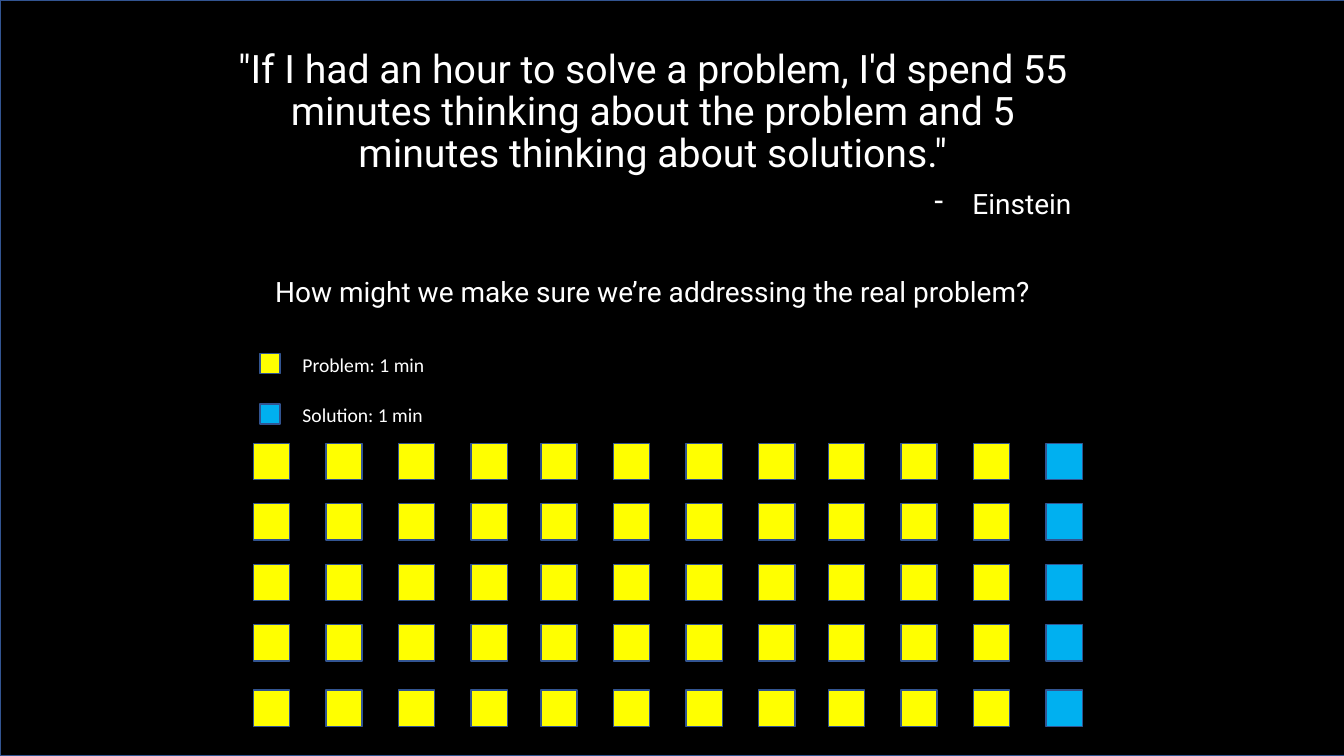
import pptx
import pptx.dml.color
import pptx.enum.shapes
import pptx.enum.text
import pptx.oxml
import pptx.oxml.ns
import pptx.util

BLACK = pptx.dml.color.RGBColor(0x00, 0x00, 0x00)
WHITE = pptx.dml.color.RGBColor(0xFF, 0xFF, 0xFF)
YELLOW = pptx.dml.color.RGBColor(0xFF, 0xFF, 0x00)
BLUE = pptx.dml.color.RGBColor(0x00, 0xB0, 0xF0)
NAVY = pptx.dml.color.RGBColor(0x32, 0x54, 0x91)
ALIGN = pptx.enum.text.PP_ALIGN

SLIDE_COLUMNS, SLIDE_ROWS = 18.52, 12.5
GROUPS, GROUP_SIZE, GROUP_PITCH = 3, 4, 3.96
MINUTE_ROWS = (0, 1, 2, 3, 4.08)
FIRST_COLUMN, FIRST_ROW = 3.49, 7.33


def write(para, text, font="Roboto", size=20, align=ALIGN.LEFT,
          spacing=1.0, before=0, bullet=None, indent=0.38):
    para.alignment = align
    para.line_spacing = spacing
    para.space_before = pptx.util.Pt(before)
    if bullet:
        properties = para._p.get_or_add_pPr()
        hang = pptx.util.Inches(indent)
        properties.set("marL", str(hang))
        properties.set("indent", str(-hang))
        mark = pptx.oxml.parse_xml(
            f'<a:buChar {pptx.oxml.ns.nsdecls("a")} char="{bullet}"/>')
        properties.append(mark)
    span = para.add_run()
    span.text = text
    span.font.name = font
    span.font.size = pptx.util.Pt(size)
    span.font.color.rgb = WHITE


class Page:
    """Draws styled elements on one slide, measured in grid columns and rows."""

    column = pptx.util.Inches(0.72)
    row = pptx.util.Inches(0.6)

    def __init__(self, deck):
        self.slide = deck.slides.add_slide(deck.slide_layouts[5])

    def place(self, left, top, width, height):
        return (round(left * self.column), round(top * self.row),
                round(width * self.column), round(height * self.row))

    def rectangle(self, left, top, width, height, color):
        box = self.slide.shapes.add_shape(
            pptx.enum.shapes.MSO_SHAPE.RECTANGLE,
            *self.place(left, top, width, height))
        box.shadow.inherit = False
        box.fill.solid()
        box.fill.fore_color.rgb = color
        box.line.color.rgb = NAVY
        box.line.width = pptx.util.Pt(1)
        return box

    def backdrop(self, color):
        box = self.rectangle(0, 0, SLIDE_COLUMNS, SLIDE_ROWS, color)
        self.slide.shapes._spTree.insert(2, box._element)

    def heading(self, left, top, width, height, lines):
        title = self.slide.shapes.title
        title.left, title.top, title.width, title.height = self.place(
            left, top, width, height)
        frame = title.text_frame
        frame.word_wrap = True
        frame.auto_size = pptx.enum.text.MSO_AUTO_SIZE.NONE
        frame.vertical_anchor = pptx.enum.text.MSO_ANCHOR.TOP
        for index, (text, style) in enumerate(lines):
            para = frame.add_paragraph() if index else frame.paragraphs[0]
            write(para, text, spacing=0.9, **style)

    def label(self, left, top, width, height, text):
        box = self.slide.shapes.add_textbox(
            *self.place(left, top, width, height))
        box.text_frame.word_wrap = True
        write(box.text_frame.paragraphs[0], text, font="Calibri", size=14)


def main():
    deck = pptx.Presentation()
    deck.slide_width = pptx.util.Inches(13.33)
    deck.slide_height = pptx.util.Inches(7.5)
    page = Page(deck)
    page.backdrop(BLACK)
    page.heading(3.08, 0.73, 11.82, 5.98, [
        ("\"If I had an hour to solve a problem, I'd spend 55 minutes thinking "
         "about the problem and 5 minutes thinking about solutions.\"",
         dict(size=28, align=ALIGN.CENTER, before=10)),
        ("Einstein", dict(align=ALIGN.RIGHT, before=10, bullet="-")),
        ("How might we make sure we’re addressing the real problem?",
         dict(align=ALIGN.CENTER, before=41)),
    ])

    last = GROUPS * GROUP_SIZE - 1
    for number in range(GROUPS * GROUP_SIZE):
        group, member = divmod(number, GROUP_SIZE)
        left = FIRST_COLUMN + group * GROUP_PITCH + member
        for minute_row in MINUTE_ROWS:
            page.rectangle(left, FIRST_ROW + minute_row, 0.5, 0.6,
                           BLUE if number == last else YELLOW)

    legend = (("Problem: 1 min", YELLOW), ("Solution: 1 min", BLUE))
    for index, (text, color) in enumerate(legend):
        drop = index * 0.83
        page.label(4.03, 5.75 + drop, 2.36, 0.57, text)
        page.rectangle(3.58, 5.85 + drop, 0.28, 0.33, color)

    deck.save("out.pptx")


if __name__ == "__main__":
    main()
